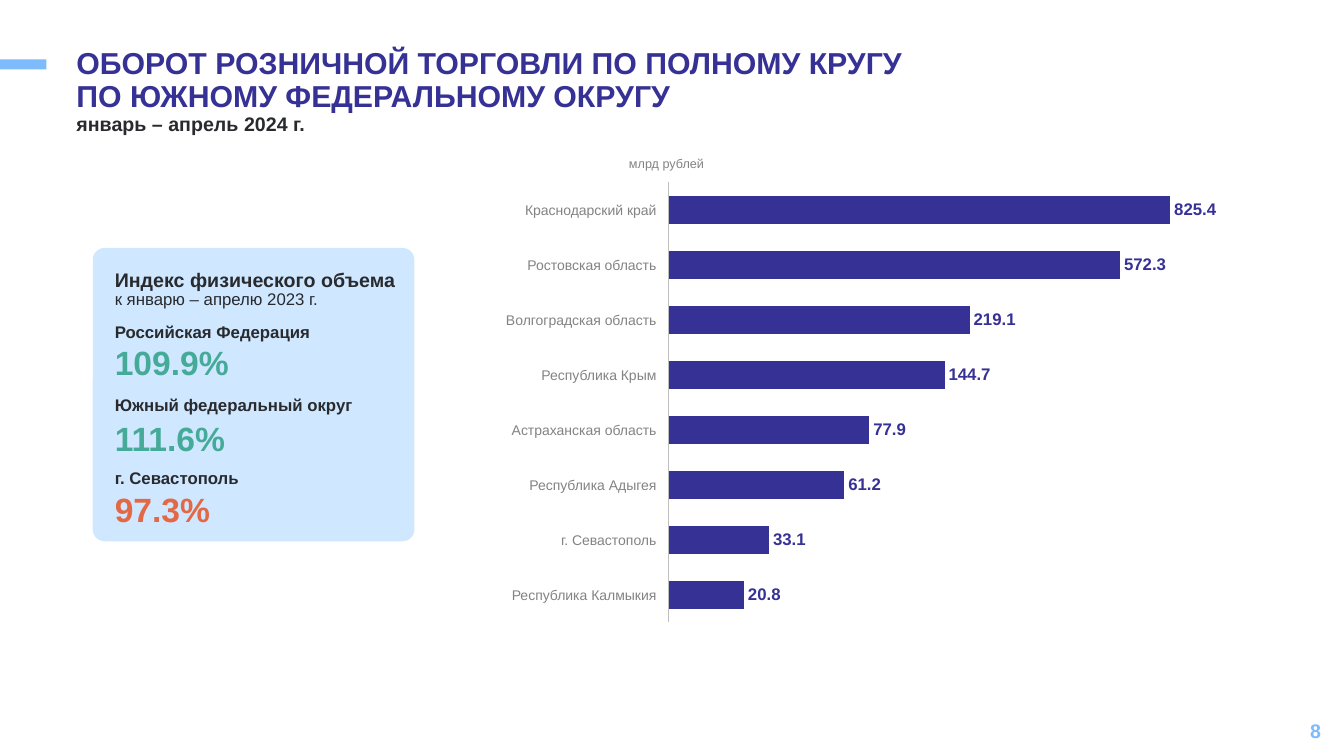
import pptx
import pptx.chart.data
import pptx.dml.color
import pptx.enum.chart
import pptx.enum.shapes
import pptx.enum.text
import pptx.oxml
import pptx.oxml.ns
import pptx.util

Inches = pptx.util.Inches
Pt = pptx.util.Pt
ALIGN = pptx.enum.text.PP_ALIGN
ANCHOR = pptx.enum.text.MSO_ANCHOR

FONT = "Arial"
INDIGO, SKY, PALE = "363194", "7DBBFC", "CFE8FF"
DARK, GRAY, AXIS = "282A2E", "838383", "BFBFBF"
GREEN, ORANGE = "46AA98", "E36846"

# Region, shown turnover, drawn bar length; top to bottom
REGIONS = [
    ("Краснодарский край", "825.4", 500),
    ("Ростовская область", "572.3", 450),
    ("Волгоградская область", "219.1", 300),
    ("Республика Крым", "144.7", 275),
    ("Астраханская область", "77.9", 200),
    ("Республика Адыгея", "61.2", 175),
    ("г. Севастополь", "33.1", 100),
    ("Республика Калмыкия", "20.8", 75),
]

# Territory, index, colour, offsets of the name and the index in the card
INDEXES = [
    ("Российская Федерация", "109.9%", GREEN, 0.68, 0.88),
    ("Южный федеральный округ", "111.6%", GREEN, 1.41, 1.64),
    ("г. Севастополь", "97.3%", ORANGE, 2.13, 2.34),
]


def rgb(value):
    return pptx.dml.color.RGBColor.from_string(value)


def style_font(font, size, color, bold=False):
    font.name = FONT
    font.size = Pt(size)
    font.bold = bold
    font.color.rgb = rgb(color)


def add_text(page, left, top, width, height, lines, spacing=None,
             align=ALIGN.LEFT, anchor=ANCHOR.TOP, wrap=True, inset=True):
    """Each line is (text, size, color, bold); line breaks part them."""
    box = page.shapes.add_textbox(Inches(left), Inches(top), Inches(width), Inches(height))
    frame = box.text_frame
    frame.word_wrap = wrap
    frame.vertical_anchor = anchor
    if not inset:
        frame.margin_left = frame.margin_right = frame.margin_bottom = 0
        frame.margin_top = Inches(0.01)
    para = frame.paragraphs[0]
    para.alignment = align
    if spacing:
        para.line_spacing = spacing
    for number, (text, size, color, bold) in enumerate(lines):
        if number:
            para.add_line_break()
        span = para.add_run()
        span.text = text
        style_font(span.font, size, color, bold)


def add_block(page, preset, left, top, width, height, color):
    block = page.shapes.add_shape(preset, Inches(left), Inches(top), Inches(width), Inches(height))
    block.shadow.inherit = False
    block.fill.solid()
    block.fill.fore_color.rgb = rgb(color)
    block.line.fill.background()
    return block


def add_header(page, left, top, width):
    # Accent dash at the slide edge
    add_block(page, pptx.enum.shapes.MSO_SHAPE.RECTANGLE, 0, top + 0.16, 0.46, 0.1, SKY)
    # Title and period
    add_text(page, left, top, width, 0.57, [
        ("ОБОРОТ РОЗНИЧНОЙ ТОРГОВЛИ ПО ПОЛНОМУ КРУГУ", 21.6, INDIGO, True),
        ("ПО ЮЖНОМУ ФЕДЕРАЛЬНОМУ ОКРУГУ", 21.6, INDIGO, True),
    ], spacing=0.9)
    add_text(page, left, top + 0.66, width, 0.44,
             [("январь – апрель 2024 г.", 14, DARK, True)], spacing=0.9)


def add_index_card(page, left, top, width, height):
    card = add_block(page, pptx.enum.shapes.MSO_SHAPE.ROUNDED_RECTANGLE,
                     left, top, width, height, PALE)
    card.adjustments[0] = 0.04
    text_left = left + 0.12
    add_text(page, text_left, top + 0.17, 3.27, 0.49, [
        ("Индекс физического объема", 14, DARK, True),
        ("к январю – апрелю 2023 г.", 12, DARK, False),
    ], spacing=0.9)
    for name, index, color, name_top, index_top in INDEXES:
        add_text(page, text_left, top + name_top, 3.2, 0.3, [(name, 12, DARK, True)])
        add_text(page, text_left, top + index_top, 1.95, 0.5, [(index, 24, color, True)])


def set_plot_area(chart, left, top, width, height):
    area = chart.element.xpath("c:chart/c:plotArea")[0]
    for layout in area.findall(pptx.oxml.ns.qn("c:layout")):
        area.remove(layout)
    area.insert(0, pptx.oxml.parse_xml(
        f'<c:layout {pptx.oxml.ns.nsdecls("c")}><c:manualLayout>'
        '<c:layoutTarget val="inner"/><c:xMode val="edge"/><c:yMode val="edge"/>'
        f'<c:x val="{left}"/><c:y val="{top}"/><c:w val="{width}"/><c:h val="{height}"/>'
        '</c:manualLayout></c:layout>'))


def add_turnover_chart(page, left, top, width, height):
    enums = pptx.enum.chart
    bars = REGIONS[::-1]
    data = pptx.chart.data.CategoryChartData()
    data.categories = [str(number) for number in range(1, len(bars) + 1)]
    data.add_series("Series 1", [length for _, _, length in bars])
    chart = page.shapes.add_chart(
        enums.XL_CHART_TYPE.BAR_CLUSTERED, Inches(left), Inches(top),
        Inches(width), Inches(height), data).chart
    chart.has_legend = False
    chart.has_title = False
    style_font(chart.font, 18, DARK)
    plot_top, plot_height = 0.034, 0.931
    set_plot_area(chart, 0.049, plot_top, 0.951, plot_height)

    # Axes
    regions = chart.category_axis
    regions.tick_label_position = enums.XL_TICK_LABEL_POSITION.NONE
    regions.major_tick_mark = enums.XL_TICK_MARK.NONE
    regions.format.line.color.rgb = rgb(AXIS)
    regions.format.line.width = Pt(1)
    values = chart.value_axis
    values.minimum_scale, values.maximum_scale = 0, 650
    values.has_major_gridlines = False
    values.visible = False

    # Bars and their labels
    plot = chart.plots[0]
    plot.gap_width, plot.overlap = 100, 9
    plot.vary_by_categories = False
    series = plot.series[0]
    series.format.fill.solid()
    series.format.fill.fore_color.rgb = rgb(INDIGO)
    labels = series.data_labels
    labels.show_value = True
    labels.position = enums.XL_LABEL_POSITION.OUTSIDE_END
    style_font(labels.font, 12, SKY, True)
    for number, (_, turnover, _) in enumerate(bars):
        label = series.points[number].data_label
        span = label.text_frame.paragraphs[0].add_run()
        span.text = turnover
        style_font(span.font, 12, INDIGO, True)
        label.position = enums.XL_LABEL_POSITION.OUTSIDE_END

    # Unit and region names, centred on the bars
    add_text(page, left - 0.16, top - 0.15, 0.96, 0.25,
             [("млрд рублей", 9, GRAY, False)], wrap=False)
    pitch = height * plot_height / len(REGIONS)
    for row, (region, _, _) in enumerate(REGIONS):
        middle = top + height * plot_top + pitch * (row + 0.5)
        add_text(page, left - 1.79, middle - 0.09, 2, 0.18,
                 [(region, 10, GRAY, False)], align=ALIGN.RIGHT, inset=False)


def add_page_number(page, left, top, width, height):
    add_text(page, left, top, width, height, [("8", 14, SKY, True)],
             align=ALIGN.RIGHT, anchor=ANCHOR.MIDDLE)


def main():
    deck = pptx.Presentation()
    deck.slide_width, deck.slide_height = Inches(13.33), Inches(7.5)
    page = deck.slides.add_slide(deck.slide_layouts[6])
    add_header(page, 0.66, 0.43, 10.41)
    add_turnover_chart(page, 6.3, 1.65, 6.8, 4.69)
    add_index_card(page, 0.92, 2.46, 3.19, 2.91)
    add_page_number(page, 10.2, 7.05, 3, 0.4)
    deck.save("out.pptx")


if __name__ == "__main__":
    main()
